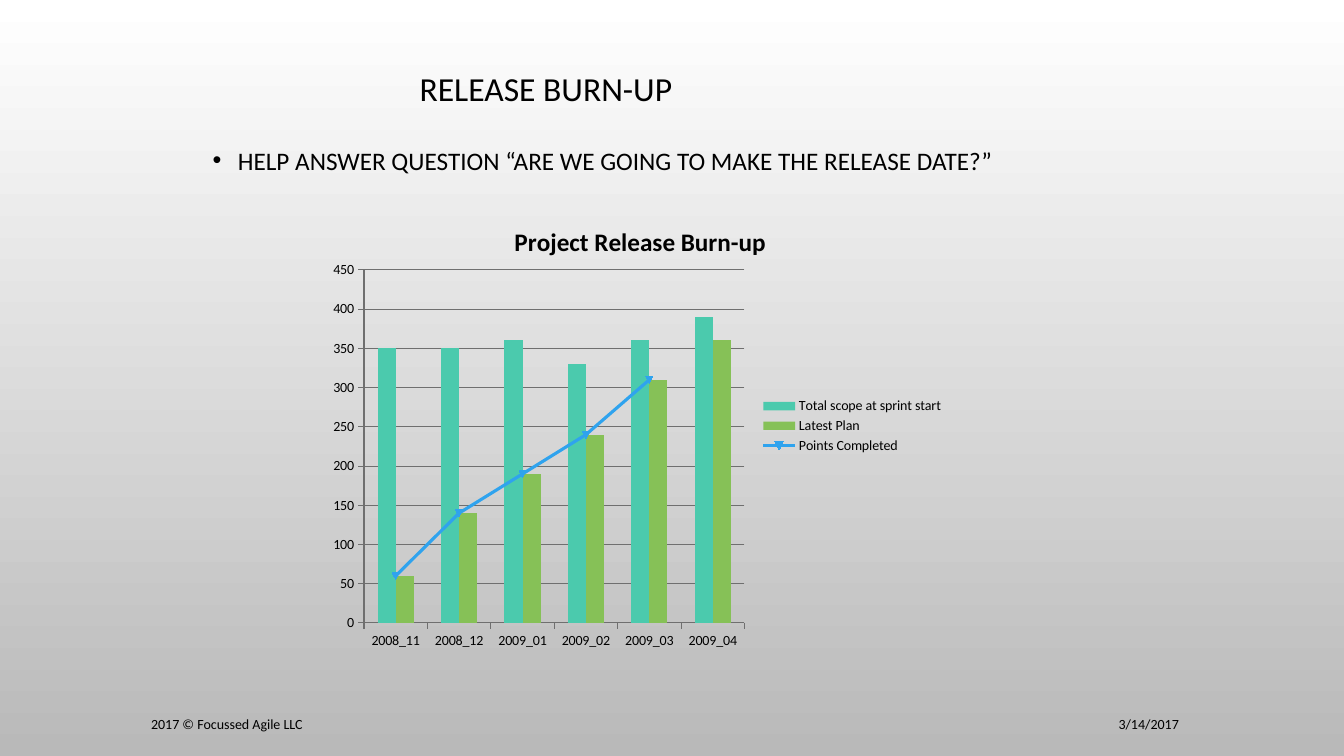
from pptx import Presentation
from pptx.chart.data import CategoryChartData
from pptx.dml.color import RGBColor
from pptx.enum.chart import XL_CHART_TYPE, XL_LEGEND_POSITION, XL_TICK_MARK
from pptx.enum.text import MSO_ANCHOR, MSO_AUTO_SIZE, PP_ALIGN
from pptx.oxml import parse_xml
from pptx.oxml.ns import nsdecls, qn
from pptx.util import Inches, Pt

COLUMNS = XL_CHART_TYPE.COLUMN_CLUSTERED
LEGEND_RIGHT = XL_LEGEND_POSITION.RIGHT
TICK_OUT = XL_TICK_MARK.OUTSIDE
TOP, MIDDLE = MSO_ANCHOR.TOP, MSO_ANCHOR.MIDDLE
LEFT, CENTER, RIGHT = PP_ALIGN.LEFT, PP_ALIGN.CENTER, PP_ALIGN.RIGHT
NO_AUTOFIT = MSO_AUTO_SIZE.NONE

FONT = "Calibri"
COLORS = {
    "text": "000000",
    "background_top": "FFFFFF",
    "background_bottom": "B9B9B9",
    "grid": "6F6F6F",
    "scope": "4BCAAD",
    "plan": "86C157",
    "completed": "2FA3EE",
}
MONTHS = ["2008_11", "2008_12", "2009_01", "2009_02", "2009_03", "2009_04"]
SERIES = [
    ("Total scope at sprint start", [350, 350, 360, 330, 360, 390]),
    ("Latest Plan", [60, 140, 190, 240, 310, 360]),
    ("Points Completed", [60, 140, 190, 240, 310, None]),
]


def color(name):
    return RGBColor.from_string(COLORS[name])


def set_font(font, size, bold=False):
    font.name, font.size, font.bold = FONT, Pt(size), bold
    font.color.rgb = color("text")


def place(shape, box):
    shape.left, shape.top, shape.width, shape.height = map(Inches, box)


def write(shape, text, size, align, anchor):
    """Fill a shape with one paragraph and return the paragraph."""
    frame = shape.text_frame
    frame.word_wrap = True
    frame.auto_size = NO_AUTOFIT
    frame.vertical_anchor = anchor
    frame.text = text
    paragraph = frame.paragraphs[0]
    paragraph.alignment = align
    paragraph.space_before = Pt(0)
    return paragraph


def paint_background(slide):
    fill = slide.background.fill
    fill.gradient()
    fill.gradient_angle = 270
    for stop, name in zip(fill.gradient_stops, ("background_top", "background_bottom")):
        stop.color.rgb = color(name)
    fill.gradient_stops[0].position = 0
    fill.gradient_stops[1].position = 1


def add_title(slide, box):
    title = slide.shapes.title
    place(title, box)
    paragraph = write(title, "RELEASE BURN-UP", 24, CENTER, MIDDLE)
    # A wide right inset moves the centred words to the left
    title.text_frame.margin_right = Inches(2.6)
    paragraph.line_spacing = 0.9
    set_font(paragraph.font, 24)


def add_body(slide, box):
    body = slide.placeholders[1]
    place(body, box)
    text = "HELP ANSWER QUESTION “ARE WE GOING TO MAKE THE RELEASE DATE?”"
    paragraph = write(body, text, 18, LEFT, TOP)
    paragraph.line_spacing = 1.2
    properties = paragraph._p.get_or_add_pPr()
    properties.set("marL", str(Inches(0.25)))
    properties.set("indent", str(-Inches(0.25)))
    properties.append(parse_xml(f'<a:buFont {nsdecls("a")} typeface="Arial"/>'))
    properties.append(parse_xml(f'<a:buChar {nsdecls("a")} char="•"/>'))
    set_font(paragraph.font, 18)


def add_footer_text(slide, box, text, align):
    shape = slide.shapes.add_textbox(*map(Inches, box))
    set_font(write(shape, text, 10, align, MIDDLE).font, 10)


def set_layout(element, index, **fractions):
    """Fix a chart part's place, in fractions of the chart's size."""
    for old_layout in element.findall(qn("c:layout")):
        element.remove(old_layout)
    target = '<c:layoutTarget val="inner"/>' if "w" in fractions else ""
    modes = "".join(f'<c:{key}Mode val="edge"/>' for key in "xy")
    values = "".join(f'<c:{key} val="{value}"/>' for key, value in fractions.items())
    element.insert(index, parse_xml(
        f'<c:layout {nsdecls("c")}><c:manualLayout>{target}{modes}{values}'
        "</c:manualLayout></c:layout>"))


def move_last_series_to_line(chart):
    """Draw the last column series as a line on the same axes."""
    bar_chart = chart._chartSpace.find(".//" + qn("c:barChart"))
    series = bar_chart.findall(qn("c:ser"))[-1]
    for invert in series.findall(qn("c:invertIfNegative")):
        series.remove(invert)
    axes = "".join(f'<c:axId val="{axis.get("val")}"/>'
                   for axis in bar_chart.findall(qn("c:axId")))
    line_chart = parse_xml(
        f'<c:lineChart {nsdecls("c")}><c:grouping val="standard"/>'
        f'<c:varyColors val="0"/><c:marker val="1"/>{axes}</c:lineChart>')
    line_chart.insert(2, series)
    bar_chart.addnext(line_chart)


def add_burn_up_chart(slide, box):
    data = CategoryChartData()
    data.categories = MONTHS
    for name, values in SERIES:
        data.add_series(name, values)
    chart = slide.shapes.add_chart(COLUMNS, *map(Inches, box), data).chart
    set_font(chart.font, 10)
    move_last_series_to_line(chart)

    # Title and legend
    chart.has_title = True
    chart.chart_title.text_frame.text = "Project Release Burn-up"
    set_font(chart.chart_title.text_frame.paragraphs[0].font, 18, bold=True)
    set_layout(chart.chart_title._element, 1, x=0.3, y=0.05)
    chart.has_legend = True
    chart.legend.position = LEGEND_RIGHT
    chart.legend.include_in_layout = False

    # Axes
    plot_area = chart._chartSpace.find(".//" + qn("c:plotArea"))
    set_layout(plot_area, 0, x=0.07, y=0.16, w=0.6, h=0.77)
    for axis in (chart.category_axis, chart.value_axis):
        axis.major_tick_mark = TICK_OUT
        axis.format.line.color.rgb = color("grid")
    value_axis = chart.value_axis
    value_axis.minimum_scale, value_axis.maximum_scale = 0, 450
    value_axis.major_unit = 50
    value_axis.has_major_gridlines = True
    value_axis.major_gridlines.format.line.color.rgb = color("grid")

    # Columns and line
    columns, line = chart.plots
    columns.gap_width, columns.overlap = 150, 0
    columns.vary_by_categories = False
    for series, name in zip(columns.series, ("scope", "plan")):
        series.format.fill.solid()
        series.format.fill.fore_color.rgb = color(name)
    completed = line.series[0]
    completed.smooth = False
    completed.format.line.color.rgb = color("completed")
    completed.format.line.width = Pt(2.25)
    completed.marker.format.fill.solid()
    completed.marker.format.fill.fore_color.rgb = color("completed")


def main():
    presentation = Presentation()
    presentation.slide_width = Inches(13.33)
    presentation.slide_height = Inches(7.5)
    slide = presentation.slides.add_slide(presentation.slide_layouts[1])
    paint_background(slide)
    add_title(slide, (1, 0.02, 11.33, 1.75))
    add_body(slide, (2.01, 1.33, 9.25, 5.23))
    add_footer_text(slide, (8.79, 6.98, 3, 0.4), "3/14/2017", RIGHT)
    add_burn_up_chart(slide, (3.17, 1.95, 6.29, 4.55))
    add_footer_text(slide, (1.4, 6.98, 7.3, 0.4), "2017 © Focussed Agile LLC", LEFT)
    presentation.save("out.pptx")


if __name__ == "__main__":
    main()
